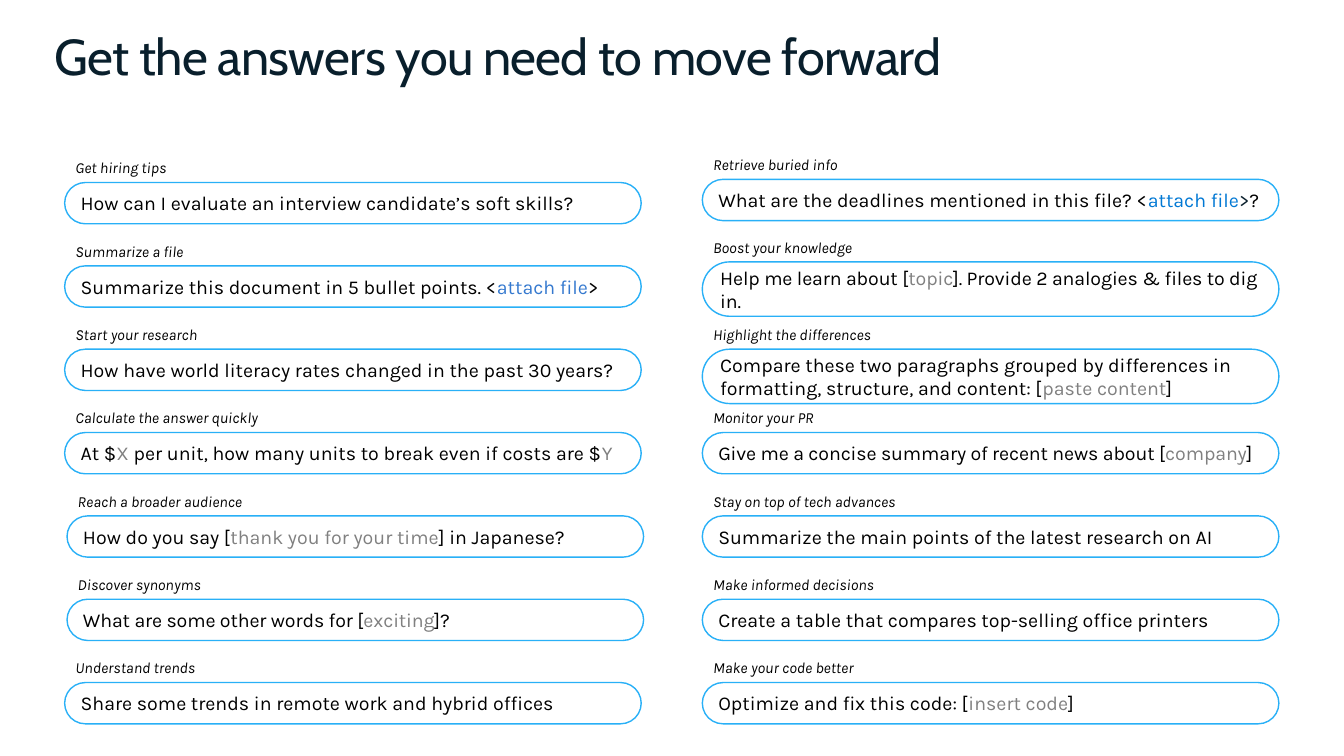
from lxml import etree
from pptx import Presentation
from pptx.dml.color import RGBColor
from pptx.enum import shapes, text
from pptx.oxml.ns import qn
from pptx.util import Cm, Pt

BLACK = RGBColor(0x00, 0x00, 0x00)
WHITE = RGBColor(0xFF, 0xFF, 0xFF)
NAVY = RGBColor(0x09, 0x1F, 0x2C)
GREY = RGBColor(0x80, 0x80, 0x80)
SKY = RGBColor(0x29, 0xB0, 0xF7)
LINK = RGBColor(0x35, 0x79, 0xCF)
DEEP_LINK = RGBColor(0x00, 0x78, 0xD4)

# Grid, in centimetres
FIRST_TOP, ROW_PITCH = 4.6, 2.1
PILL_WIDTH, LINE_HEIGHT, TWO_LINE_HEIGHT = 14.53, 1.04, 1.37

# Each prompt: label, coloured runs, options for its pill
LEFT_PROMPTS = [
    ("Get hiring tips",
     [("How can I evaluate an interview candidate’s soft skills?", BLACK)], {}),
    ("Summarize a file",
     [("Summarize this document in 5 bullet points. <", BLACK),
      ("attach file", LINK), (">", BLACK)], {}),
    ("Start your research",
     [("How have world literacy rates changed in the past 30 years?", BLACK)], {}),
    ("Calculate the answer quickly",
     [("At $", BLACK), ("X", GREY),
      (" per unit, how many units to break even if costs are $", BLACK),
      ("Y", GREY)], {}),
    ("Reach a broader audience",
     [("How do you say [", BLACK), ("thank you for your time", GREY),
      ("] in Japanese?", BLACK)], {"shift": 0.06}),
    ("Discover synonyms",
     [("What are some other words for [", BLACK), ("exciting", GREY),
      ("]?", BLACK)], {"shift": 0.06, "spacing": -0.1}),
    ("Understand trends",
     [("Share some trends in remote work and hybrid offices", BLACK)], {}),
]
RIGHT_PROMPTS = [
    ("Retrieve buried info",
     [("What are the deadlines mentioned in this file? <", BLACK),
      ("attach file", DEEP_LINK), (">", NAVY), ("?", BLACK)], {"rise": 0.08}),
    ("Boost your knowledge",
     [("Help me learn about [", BLACK), ("topic", GREY),
      ("]. Provide 2 analogies & files to dig in.", BLACK)],
     {"rise": 0.1, "height": TWO_LINE_HEIGHT, "spacing": -0.1}),
    ("Highlight the differences",
     [("Compare these two paragraphs grouped by differences in formatting, "
       "structure, and content: [", BLACK),
      ("paste content", GREY), ("]", BLACK)], {"height": TWO_LINE_HEIGHT}),
    ("Monitor your PR",
     [("Give me a concise summary of recent news about [", BLACK),
      ("company", GREY), ("]", BLACK)], {"spacing": -0.1}),
    ("Stay on top of tech advances",
     [("Summarize the main points of the latest research on AI", BLACK)], {}),
    ("Make informed decisions",
     [("Create a table that compares top-selling office printers", BLACK)], {}),
    ("Make your code better",
     [("Optimize and fix this code: [", BLACK), ("insert code", GREY),
      ("]", BLACK)], {}),
]


def write_text(shape, runs, size, font="Karla", italic=False, spacing=0,
               anchor=text.MSO_ANCHOR.TOP):
    """Fill a shape with one left-aligned paragraph of coloured runs."""
    frame = shape.text_frame
    frame.word_wrap = True
    frame.vertical_anchor = anchor
    paragraph = frame.paragraphs[0]
    paragraph.alignment = text.PP_ALIGN.LEFT
    for words, color in runs:
        run = paragraph.add_run()
        run.text = words
        run.font.name = font
        run.font.size = Pt(size)
        run.font.italic = italic
        run.font.color.rgb = color
        if spacing:
            run.font._element.set("spc", str(round(spacing * 100)))


def add_text_box(slide, left, top, width, height, runs, size, margin=None, **style):
    box = slide.shapes.add_textbox(Cm(left), Cm(top), Cm(width), Cm(height))
    if margin is not None:
        frame = box.text_frame
        frame.margin_left = frame.margin_right = Cm(margin)
        frame.margin_top = frame.margin_bottom = Cm(margin)
    write_text(box, runs, size, **style)


def add_rounded_box(slide, left, top, width, height, rounding, outline=None):
    """Add a translucent white rounded rectangle."""
    box = slide.shapes.add_shape(shapes.MSO_SHAPE.ROUNDED_RECTANGLE,
                                 Cm(left), Cm(top), Cm(width), Cm(height))
    box.adjustments[0] = rounding
    box.shadow.inherit = False
    box.fill.solid()
    box.fill.fore_color.rgb = WHITE
    color = box._element.spPr.find(qn("a:solidFill"))[0]
    etree.SubElement(color, qn("a:alpha"), val="74000")
    if outline is None:
        box.line.fill.background()
    else:
        box.line.color.rgb = outline
        box.line.width = Pt(1)
    return box


def add_prompt(slide, left, top, label, runs, shift=0, rise=0,
               height=LINE_HEIGHT, spacing=0):
    """Add a prompt pill with its label above."""
    left, top = left + shift, top - rise
    pill = add_rounded_box(slide, left, top, PILL_WIDTH, height, 0.5, SKY)
    write_text(pill, runs, 14, spacing=spacing, anchor=text.MSO_ANCHOR.MIDDLE)
    add_text_box(slide, left + 0.27, top - 0.61, 13.67, 0.48,
                 [(label, BLACK)], 11, margin=0, italic=True)


def add_column(slide, panel_left, pill_left, prompts):
    add_rounded_box(slide, panel_left, 3.45, 15.62, 15.21, 0.024)
    for row, (label, runs, options) in enumerate(prompts):
        add_prompt(slide, pill_left, FIRST_TOP + row * ROW_PITCH,
                   label, runs, **options)


def main():
    presentation = Presentation()
    presentation.slide_width = Cm(33.87)
    presentation.slide_height = Cm(19.05)
    slide = presentation.slides.add_slide(presentation.slide_layouts[6])

    # Title
    add_text_box(slide, 1.12, 0.5, 30.58, 1.55,
                 [("Get the answers you need to move forward", NAVY)], 36,
                 font="Cabin", spacing=-0.5)

    # Two columns of prompts
    add_column(slide, 1.12, 1.63, LEFT_PROMPTS)
    add_column(slide, 17.25, 17.7, RIGHT_PROMPTS)

    presentation.save("out.pptx")


if __name__ == "__main__":
    main()
